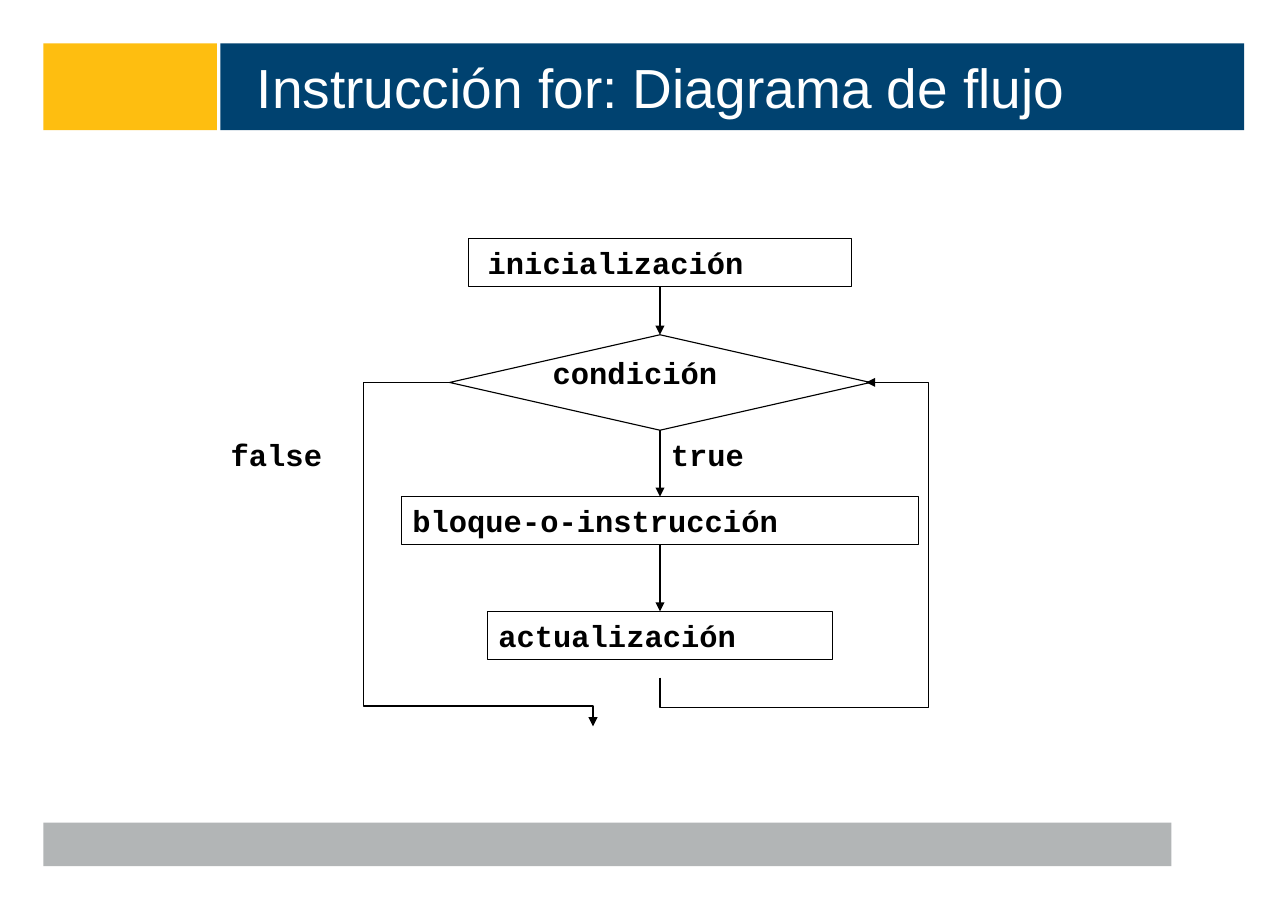
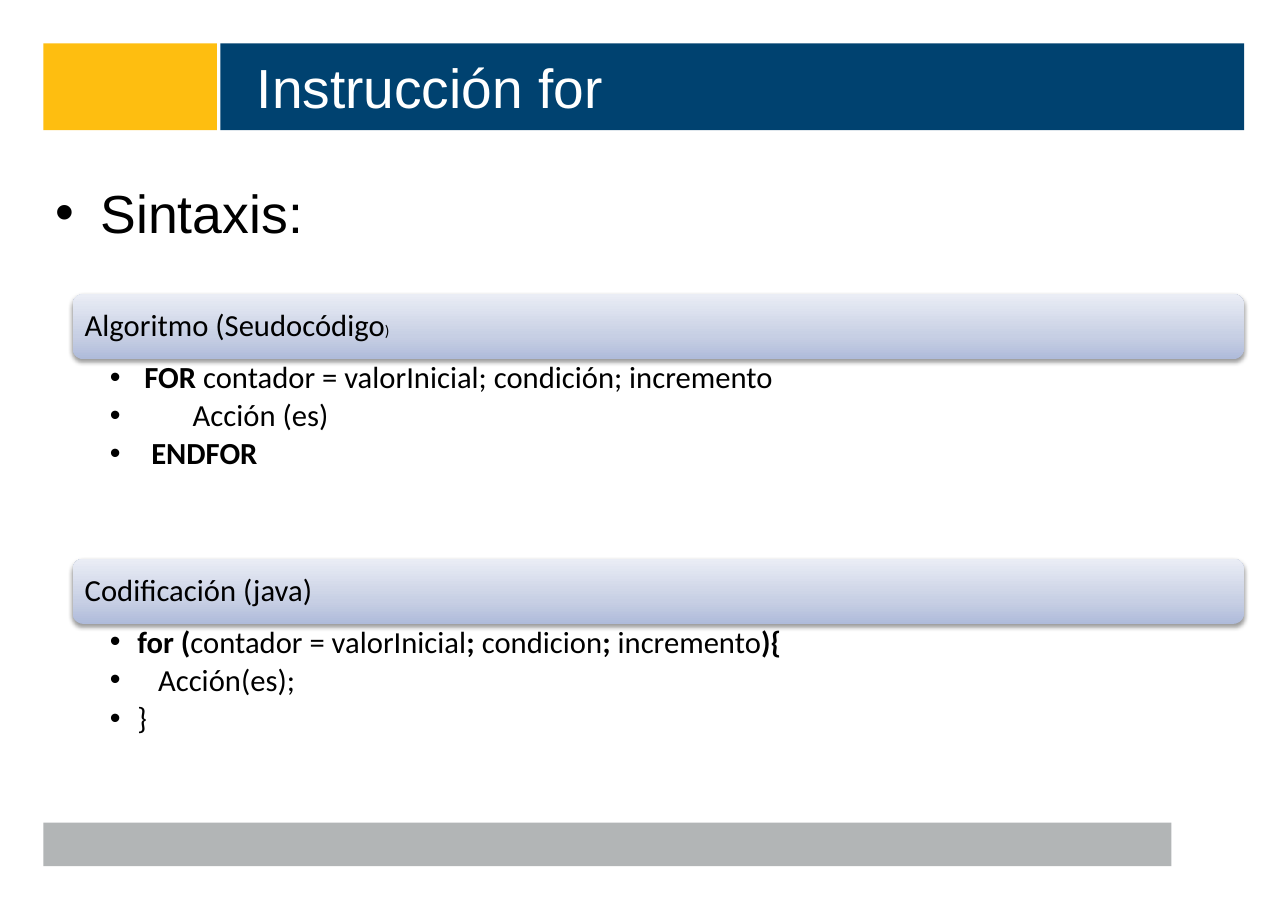
from dataclasses import dataclass
from itertools import pairwise
from typing import Any, NamedTuple

import pptx
import pptx.dml.color
import pptx.enum.shapes
import pptx.enum.text
import pptx.oxml
import pptx.oxml.ns
import pptx.util

Pt = pptx.util.Pt
Rgb = pptx.dml.color.RGBColor.from_string
Kind = pptx.enum.shapes.MSO_SHAPE
Anchor = pptx.enum.text.MSO_ANCHOR
Align = pptx.enum.text.PP_ALIGN
qn = pptx.oxml.ns.qn
NS = pptx.oxml.ns.nsdecls("a")


@dataclass(frozen=True)
class Theme:
    gold: str = "FEBE10"
    navy: str = "004270"
    gray: str = "B2B5B6"
    white: str = "FFFFFF"
    ink: str = "000000"
    shade: tuple = ((0, "AFBBDA"), (35, "C7CFE4"), (100, "EAEDF5"))
    sans: str = "Arial"
    mono: str = "Courier New"
    text: str = "Calibri"
    title: float = 36
    lead: float = 35
    code: float = 19.9
    list: float = 20
    small: float = 10
    rule: float = 0.75


class Box(NamedTuple):
    left: float
    top: float
    width: float
    height: float


class Run(NamedTuple):
    text: str
    bold: bool = False
    size: float = 0


@dataclass(frozen=True)
class Step:
    kind: Any
    top: float
    width: float
    height: float
    text: str = ""
    inset: float = 7.2


@dataclass(frozen=True)
class Part:
    head: list[Run]
    lines: list[list[Run]]


T = Theme()
EDGE = 28.35
AXIS = 431.3

BANDS = (
    (Box(EDGE, EDGE, 113.4, 56.7), T.gold),
    (Box(EDGE, 537.8, 737.1, EDGE), T.gray),
)
TITLE = Box(144, EDGE, 669, 56.7)

MONO = dict(name=T.mono, size=Pt(T.code), bold=True)
SANS = dict(name=T.sans, size=Pt(T.lead))
PLAIN = dict(name=T.text, size=Pt(T.list))

STEPS = (
    Step(Kind.RECTANGLE, 156, 250, 31.3, "inicialización", 12.4),
    Step(Kind.DIAMOND, 218.8, 275, 62.4),
    Step(Kind.RECTANGLE, 324.6, 337.8, 31.3, "bloque-o-instrucción"),
    Step(Kind.RECTANGLE, 399.6, 225.4, 31.3, "actualización"),
)
LABELS = (
    (Box(354.1, 228.2, 125, 31.3), "condición"),
    (Box(AXIS, 281.2, 66, 31.3), "true"),
    (Box(143.7, 281.2, 78, 31.3), "false"),
)
PATHS = (
    ((293.8, 250), (237.4, 250), (237.4, 461.5), (387.5, 461.5), (387.5, 474.8)),
    ((AXIS, 443), (AXIS, 462.2), (606.5, 462.2), (606.5, 250), (566, 250)),
)
PARTS = (
    Part(
        [Run("Algoritmo (Seudocódigo"), Run(")", size=T.small)],
        [
            [Run(" "), Run("FOR", True),
             Run(" contador = valorInicial; condición; incremento")],
            [Run("        Acción (es)")],
            [Run("  "), Run("ENDFOR", True)],
        ],
    ),
    Part(
        [Run("Codificación (java)")],
        [
            [Run("for (", True), Run("contador = valorInicial"), Run("; ", True),
             Run("condicion"), Run(";", True), Run(" incremento"), Run("){", True)],
            [Run("   Acción(es);")],
            [Run("}")],
        ],
    ),
)


def put(item: Any, form: dict[str, Any]) -> None:
    for name, value in form.items():
        setattr(item, name, value)


def points(box: Box) -> list[int]:
    return [Pt(value) for value in box]


def shape(slide: Any, kind: Any, box: Box, fill: str = "", line: str = "") -> Any:
    item = slide.shapes.add_shape(kind, *points(box))
    item.shadow.inherit = False
    paint(item, fill, line)
    return item


def paint(item: Any, fill: str = "", line: str = "") -> None:
    """Give the item a solid fill and a thin line, or none of them."""
    if fill:
        item.fill.solid()
        item.fill.fore_color.rgb = Rgb(fill)
    else:
        item.fill.background()
    if line:
        item.line.color.rgb = Rgb(line)
        item.line.width = Pt(T.rule)
    else:
        item.line.fill.background()


def frame(item: Any, left: float = 7.2, top: float = 3.6,
          anchor: Any = Anchor.TOP) -> Any:
    """Set up the text frame with insets equal above and below."""
    body = item.text_frame
    put(body, dict(word_wrap=True, vertical_anchor=anchor, margin_left=Pt(left),
                   margin_right=Pt(7.2), margin_top=Pt(top), margin_bottom=Pt(top)))
    return body


def write(para: Any, runs: list[Run], font: dict[str, Any], color: str = T.ink) -> None:
    para.alignment = Align.LEFT
    for run in runs:
        piece = para.add_run()
        piece.text = run.text
        form = dict(bold=run.bold) | font
        if run.size:
            form["size"] = Pt(run.size)
        put(piece.font, form)
        piece.font.color.rgb = Rgb(color)


def bullet(para: Any, indent: float) -> None:
    props = para._p.get_or_add_pPr()
    props.set("marL", str(Pt(indent)))
    props.set("indent", str(-Pt(indent)))
    props.append(pptx.oxml.parse_xml(f'<a:buFont {NS} typeface="{T.sans}"/>'))
    props.append(pptx.oxml.parse_xml(f'<a:buChar {NS} char="•"/>'))


def arrow(item: Any) -> None:
    """Put an arrowhead at the end of the line."""
    item.line._get_or_add_ln().append(
        pptx.oxml.parse_xml(f'<a:tailEnd {NS} type="triangle"/>'))


def link(slide: Any, start: float, end: float) -> None:
    """Draw an arrow down the axis of the chart."""
    item = slide.shapes.add_connector(
        pptx.enum.shapes.MSO_CONNECTOR.STRAIGHT, Pt(AXIS), Pt(start), Pt(AXIS), Pt(end))
    put(item.line, dict(width=Pt(T.rule)))
    item.line.color.rgb = Rgb(T.ink)
    arrow(item)
    item._element.spPr.append(pptx.oxml.parse_xml(f"<a:effectLst {NS}/>"))


def bend(slide: Any, spots: tuple) -> None:
    """Draw an arrow with corners."""
    first, *rest = [(Pt(x), Pt(y)) for x, y in spots]
    build = slide.shapes.build_freeform(*first)
    build.add_line_segments(rest, close=False)
    item = build.convert_to_shape()
    item.shadow.inherit = False
    paint(item, line=T.ink)
    arrow(item)


def gloss(item: Any) -> None:
    """Add the shaded fill and the soft shadow of a heading bar."""
    stops = "".join(f'<a:gs pos="{spot * 1000}"><a:srgbClr val="{color}"/></a:gs>'
                    for spot, color in T.shade)
    item.fill.gradient()
    props = item._element.spPr
    old = props.find(qn("a:gradFill"))
    props.replace(old, pptx.oxml.parse_xml(
        f'<a:gradFill {NS} rotWithShape="1"><a:gsLst>{stops}</a:gsLst>'
        '<a:lin ang="16200000" scaled="0"/></a:gradFill>'))
    props.find(qn("a:effectLst")).append(pptx.oxml.parse_xml(
        f'<a:outerShdw {NS} blurRad="{Pt(3.1)}" dist="{Pt(1.6)}" dir="5400000" '
        f'rotWithShape="0"><a:srgbClr val="{T.ink}"><a:alpha val="38000"/>'
        '</a:srgbClr></a:outerShdw>'))


def page(deck: Any, title: str) -> Any:
    """Add a slide with the shared bands and its title."""
    slide = deck.slides.add_slide(deck.slide_layouts[6])
    for box, color in BANDS:
        shape(slide, Kind.RECTANGLE, box, color)
    band = shape(slide, Kind.RECTANGLE, TITLE, T.navy)
    body = frame(band, 23.8, anchor=Anchor.MIDDLE)
    write(body.paragraphs[0], [Run(title)],
          dict(name=T.sans, size=Pt(T.title)), T.white)
    return slide


def flow(slide: Any) -> None:
    for step in STEPS:
        box = Box(AXIS - step.width / 2, step.top, step.width, step.height)
        item = shape(slide, step.kind, box, line=T.ink)
        if step.text:
            body = frame(item, step.inset)
            write(body.paragraphs[0], [Run(step.text)], MONO)
    for step, after in pairwise(STEPS):
        link(slide, step.top + step.height, after.top)
    for spots in PATHS:
        bend(slide, spots)
    for box, text in LABELS:
        body = frame(slide.shapes.add_textbox(*points(box)))
        write(body.paragraphs[0], [Run(text)], MONO)


def syntax(slide: Any) -> None:
    lead = slide.shapes.add_textbox(*points(Box(EDGE, 114, 785, 52)))
    para = frame(lead, 7.9).paragraphs[0]
    bullet(para, 29.5)
    write(para, [Run("Sintaxis:")], SANS)
    for index, part in enumerate(PARTS):
        bar = Box(47.5, 192.2 + 173 * index, 765.4, 42.6)
        item = shape(slide, Kind.ROUNDED_RECTANGLE, bar)
        gloss(item)
        para = frame(item, 5.8, anchor=Anchor.MIDDLE).paragraphs[0]
        para.line_spacing = 0.9
        write(para, part.head, PLAIN)
        area = bar._replace(top=bar.top + bar.height, height=80.6)
        body = frame(slide.shapes.add_textbox(*points(area)), 24.3, 1.8)
        for row, line in enumerate(part.lines):
            para = body.add_paragraph() if row else body.paragraphs[0]
            bullet(para, 18)
            put(para, dict(line_spacing=0.9, space_after=Pt(3.3)))
            write(para, line, PLAIN)


def main() -> None:
    deck = pptx.Presentation()
    put(deck, dict(slide_width=Pt(841.68), slide_height=Pt(595.44)))
    flow(page(deck, "Instrucción for: Diagrama de flujo"))
    syntax(page(deck, "Instrucción for"))
    deck.save("out.pptx")


if __name__ == "__main__":
    main()
